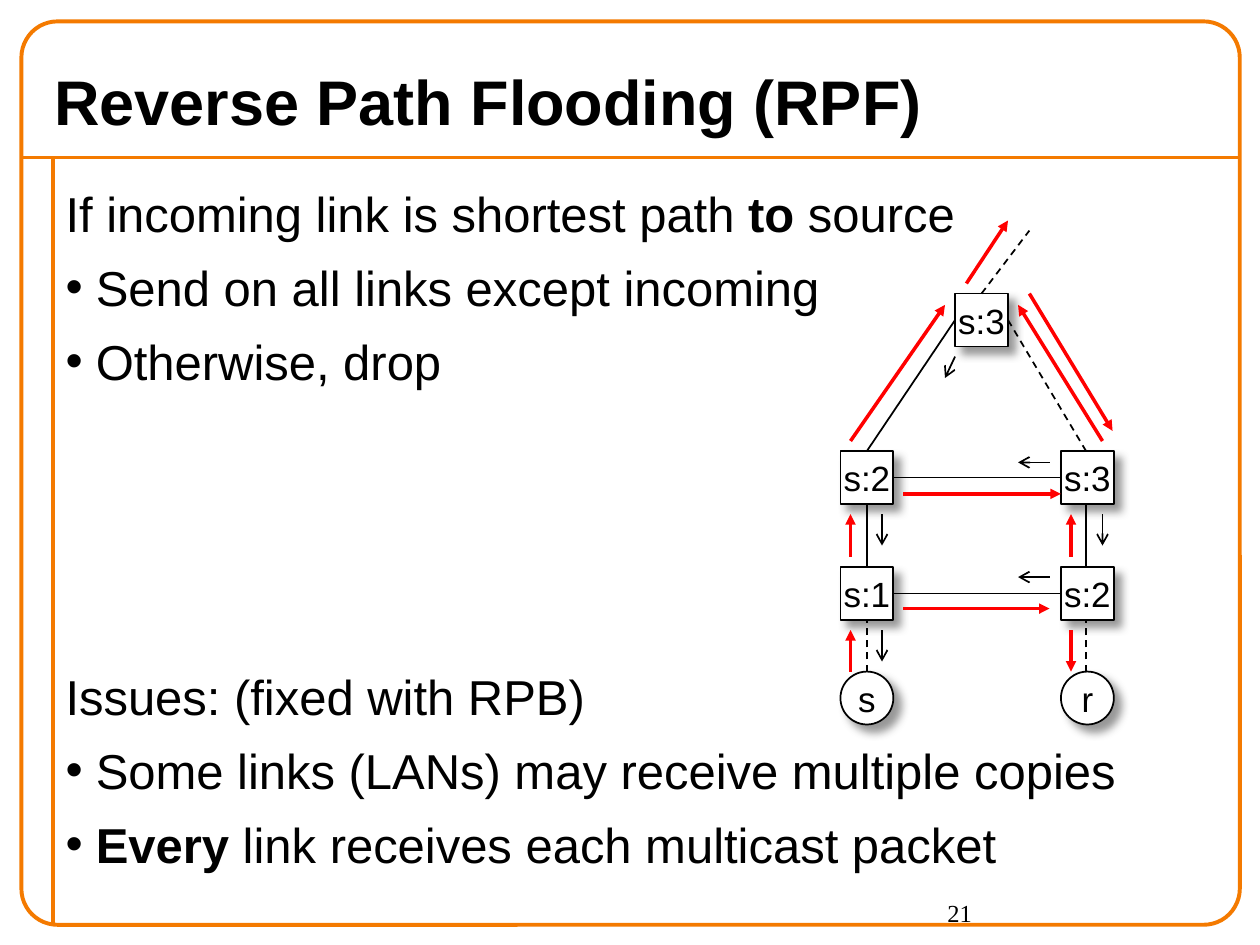
"""Build the Reverse Path Flooding slide with its link diagram."""
from dataclasses import dataclass

from lxml import etree
from pptx import Presentation
from pptx.dml.color import RGBColor
from pptx.enum.dml import MSO_LINE
from pptx.enum.shapes import MSO_CONNECTOR, MSO_SHAPE
from pptx.enum.text import MSO_ANCHOR, MSO_AUTO_SIZE, PP_ALIGN
from pptx.oxml.ns import qn
from pptx.util import Inches, Pt

ORANGE = RGBColor(0xF4, 0x7A, 0x00)
BLACK = RGBColor(0, 0, 0)
WHITE = RGBColor(0xFF, 0xFF, 0xFF)
RED = RGBColor(0xFF, 0, 0)
BOX, DISC, FRAME = MSO_SHAPE.RECTANGLE, MSO_SHAPE.OVAL, MSO_SHAPE.ROUNDED_RECTANGLE
STRAIGHT = MSO_CONNECTOR.STRAIGHT
DASH = MSO_LINE.DASH
LEFT, CENTER = PP_ALIGN.LEFT, PP_ALIGN.CENTER
MIDDLE, TOP = MSO_ANCHOR.MIDDLE, MSO_ANCHOR.TOP
FIXED = MSO_AUTO_SIZE.NONE
SIDE = 0.42
WEST, EAST = 6.67, 8.42


@dataclass(frozen=True)
class Node:
    label: str
    left: float
    top: float
    form: int = BOX


@dataclass(frozen=True)
class Link:
    x1: float
    y1: float
    x2: float
    y2: float
    dashed: bool = False


@dataclass(frozen=True)
class Style:
    color: RGBColor
    width: float
    tip: str = ""


@dataclass(frozen=True)
class Point:
    runs: tuple
    mark: bool = True
    before: float = 15.4


PLAIN = Style(BLACK, 1)
BACK = Style(BLACK, 1, "arrow")
FLOOD = Style(RED, 2, "triangle")
RULE = Style(ORANGE, 2.25)

POINTS = [
    Point((("If incoming link is shortest path ", False), ("to", True),
           (" source", False)), False, 0),
    Point((("Send on all links except incoming", False),)),
    Point((("Otherwise, drop", False),)),
    Point((("Issues: (fixed with RPB)", False),), False, 164),
    Point((("Some links (LANs) may receive multiple copies", False),)),
    Point((("Every ", True), ("link receives each multicast packet", False))),
]
NODES = [
    Node("s:3", 7.58, 2.33),
    Node("s:2", WEST, 3.58), Node("s:3", EAST, 3.58),
    Node("s:1", WEST, 4.5), Node("s:2", EAST, 4.5),
    Node("s", WEST, 5.33, DISC), Node("r", EAST, 5.33, DISC),
]
RULES = [Link(0.17, 1.25, 9.83, 1.25), Link(0.42, 1.25, 0.42, 7.33)]
WIRES = [
    *(Link(x, 4, x, 4.5) for x in (6.88, 8.62)),
    *(Link(x, 5.33, x, 4.92, True) for x in (6.88, 8.62)),
    *(Link(WEST + SIDE, y, EAST, y) for y in (3.79, 4.71)),
    Link(7.58, 2.54, 6.88, 3.58),
    Link(8, 2.54, 8.62, 3.58, True),
    Link(7.79, 2.33, 8.17, 1.83, True),
]
BACKS = [
    *(Link(x, y, x, y + 0.25) for x, y in ((7, 4.08), (7, 5), (8.75, 4.08))),
    *(Link(8.33, y, 8.08, y) for y in (3.67, 4.58)),
    Link(7.58, 2.83, 7.5, 3),
]
FLOODS = [
    *(Link(x, 4.42, x, 4.08) for x in (6.75, 8.5)),
    Link(6.75, 5.33, 6.75, 5), Link(8.5, 5, 8.5, 5.33),
    Link(7.17, 4.83, 8.33, 4.83), Link(7.17, 3.92, 8.42, 3.92),
    Link(6.75, 3.5, 7.5, 2.42), Link(8.75, 3.5, 8.08, 2.42),
    Link(8.17, 2.33, 8.83, 3.42), Link(7.67, 2.25, 8, 1.75),
]


def place(shape, left: float, top: float, width: float, height: float) -> None:
    shape.left, shape.top = Inches(left), Inches(top)
    shape.width, shape.height = Inches(width), Inches(height)


def write(para, text: str, size: float, bold: bool = False, face: str = "Arial") -> None:
    run = para.add_run()
    run.text = text
    font = run.font
    font.name, font.size, font.bold = face, Pt(size), bold
    font.color.rgb = BLACK


def draw_link(shapes, link: Link, style: Style) -> None:
    line = shapes.add_connector(STRAIGHT, Inches(link.x1), Inches(link.y1),
                                Inches(link.x2), Inches(link.y2))
    line.line.color.rgb = style.color
    line.line.width = Pt(style.width)
    if link.dashed:
        line.line.dash_style = DASH
    props = line._element.spPr
    if style.tip:
        etree.SubElement(props.find(qn("a:ln")), qn("a:tailEnd"), type=style.tip)
    etree.SubElement(props, qn("a:effectLst"))


def cast_shade(shape) -> None:
    shape.shadow.inherit = False
    effects = shape._element.spPr.find(qn("a:effectLst"))
    shade = etree.SubElement(effects, qn("a:outerShdw"), blurRad=str(Pt(5)),
                             dist=str(Pt(5.7)), dir="2700000", algn="ctr",
                             rotWithShape="0")
    color = etree.SubElement(shade, qn("a:srgbClr"), val="777777")
    etree.SubElement(color, qn("a:alpha"), val="75000")


def draw_node(shapes, node: Node) -> None:
    shape = shapes.add_shape(node.form, Inches(node.left), Inches(node.top),
                             Inches(SIDE), Inches(SIDE))
    shape.fill.solid()
    shape.fill.fore_color.rgb = WHITE
    shape.line.color.rgb = BLACK
    shape.line.width = Pt(1)
    cast_shade(shape)
    frame = shape.text_frame
    frame.word_wrap = False
    frame.vertical_anchor = MIDDLE
    para = frame.paragraphs[0]
    para.alignment = CENTER
    write(para, node.label, 20)


def fill_point(para, point: Point) -> None:
    para.alignment = LEFT
    para.line_spacing = 0.8
    para.space_before = Pt(point.before)
    props = para._p.get_or_add_pPr()
    props.set("marL", str(Inches(0.24)))
    props.set("indent", str(Inches(-0.24)))
    if point.mark:
        etree.SubElement(props, qn("a:buFont"), typeface="Arial")
        etree.SubElement(props, qn("a:buChar"), char="•")
    else:
        etree.SubElement(props, qn("a:buNone"))
    for text, bold in point.runs:
        write(para, text, 28, bold)


def draw_frame(shapes) -> None:
    for rule in RULES:
        draw_link(shapes, rule, RULE)
    frame = shapes.add_shape(FRAME, Inches(0.17), Inches(0.17), Inches(9.67), Inches(7.17))
    frame.adjustments[0] = 0.04
    frame.fill.background()
    frame.line.color.rgb = ORANGE
    frame.line.width = Pt(2.25)
    frame.shadow.inherit = False


def main() -> None:
    deck = Presentation()
    deck.slide_width, deck.slide_height = Inches(10), Inches(7.5)
    slide = deck.slides.add_slide(deck.slide_layouts[1])
    shapes = slide.shapes
    draw_frame(shapes)

    title, body = shapes.title, slide.placeholders[1]
    place(title, 0.33, 0.42, 9.67, 0.75)
    title.text_frame.auto_size = FIXED
    title.text_frame.vertical_anchor = MIDDLE
    head = title.text_frame.paragraphs[0]
    head.alignment = LEFT
    write(head, "Reverse Path Flooding (RPF)", 36, True)

    place(body, 0.42, 1.5, 9.33, 6)
    text = body.text_frame
    text.auto_size = FIXED
    text.vertical_anchor = TOP
    for rank, point in enumerate(POINTS):
        fill_point(text.add_paragraph() if rank else text.paragraphs[0], point)

    page = shapes.add_textbox(Inches(7.42), Inches(7.08), Inches(2.08), Inches(0.5))
    page.text_frame.word_wrap = True
    write(page.text_frame.paragraphs[0], "21", 14, face="Times New Roman")

    for node in NODES:
        draw_node(shapes, node)
    for links, style in ((WIRES, PLAIN), (BACKS, BACK), (FLOODS, FLOOD)):
        for link in links:
            draw_link(shapes, link, style)
    deck.save("out.pptx")


if __name__ == "__main__":
    main()
